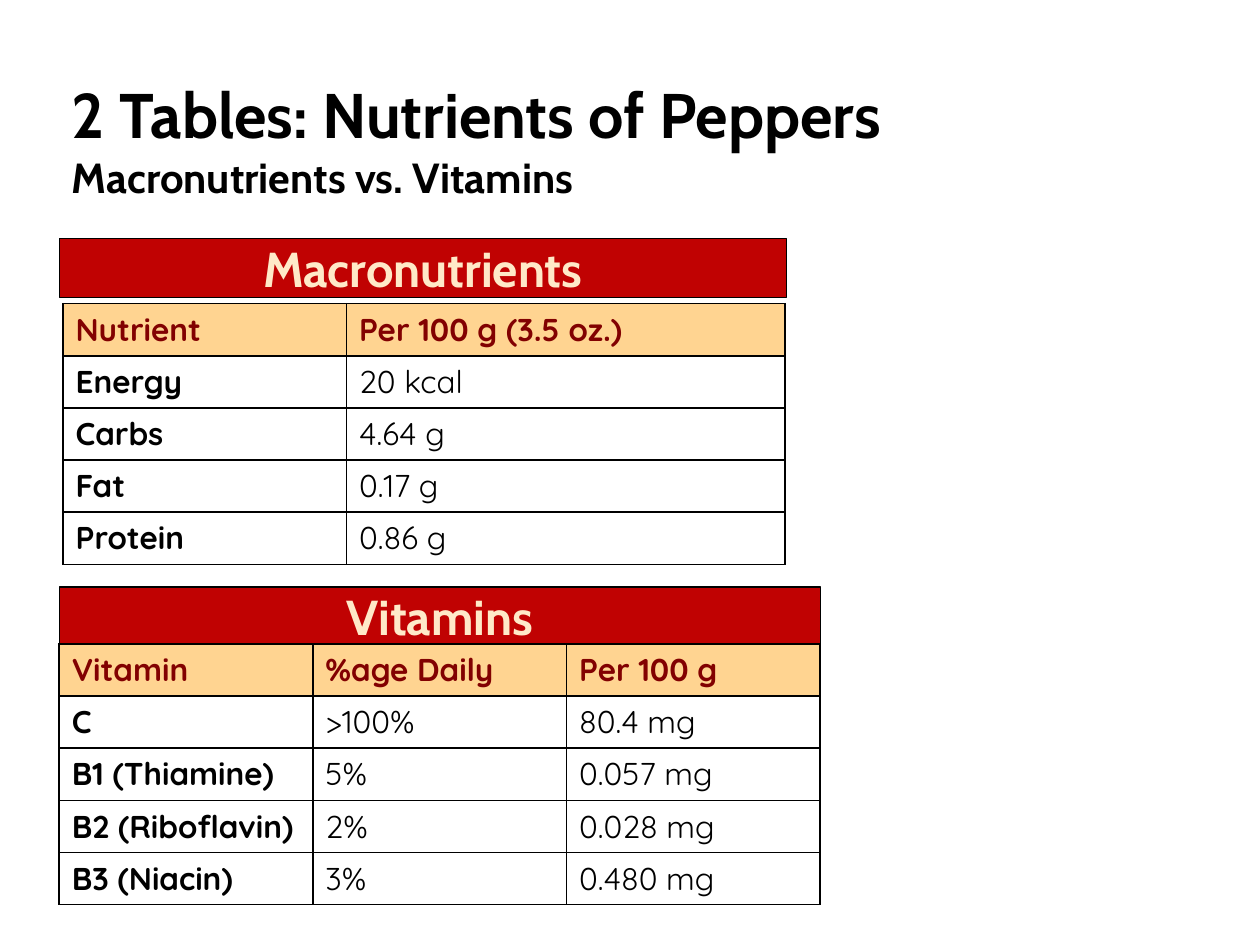
from lxml import etree
from pptx import Presentation
from pptx.dml.color import RGBColor
from pptx.enum.text import MSO_ANCHOR, MSO_AUTO_SIZE, PP_ALIGN
from pptx.oxml.ns import qn
from pptx.util import Inches, Pt

TOP, BOTTOM = MSO_ANCHOR.TOP, MSO_ANCHOR.BOTTOM
LEFT, CENTER = PP_ALIGN.LEFT, PP_ALIGN.CENTER
NO_AUTOFIT = MSO_AUTO_SIZE.NONE

BLACK = RGBColor(0x00, 0x00, 0x00)
WHITE = RGBColor(0xFF, 0xFF, 0xFF)
RED = RGBColor(0xC0, 0x02, 0x02)
DARK_RED = RGBColor(0x82, 0x01, 0x01)
CREAM = RGBColor(0xFF, 0xE9, 0xC8)
ORANGE = RGBColor(0xFF, 0xD4, 0x91)

HEADING_FONT = "Cabin"
TABLE_FONT = "Quicksand"
COMPARISON_LAYOUT = 4
ROW_HEIGHT = 0.413

MACRONUTRIENTS = [
    ("Nutrient", "Per 100 g (3.5 oz.)"),
    ("Energy", "20 kcal"),
    ("Carbs", "4.64 g"),
    ("Fat", "0.17 g"),
    ("Protein", "0.86 g"),
]
VITAMINS = [
    ("Vitamin", "%age Daily", "Per 100 g"),
    ("C", ">100%", "80.4 mg"),
    ("B1 (Thiamine)", "5%", "0.057 mg"),
    ("B2 (Riboflavin)", "2%", "0.028 mg"),
    ("B3 (Niacin)", "3%", "0.480 mg"),
]


def place(shape, left, top, width, height):
    shape.left, shape.top = Inches(left), Inches(top)
    shape.width, shape.height = Inches(width), Inches(height)


def set_font(font, name, size, color, bold):
    font.name, font.size, font.bold = name, Pt(size), bold
    font.color.rgb = color


def add_title(slide, box, title, subtitle):
    shape = slide.shapes.title
    place(shape, *box)
    frame = shape.text_frame
    frame.auto_size = NO_AUTOFIT
    frame.vertical_anchor = TOP
    paragraph = frame.paragraphs[0]
    paragraph.alignment = LEFT
    set_font(paragraph.font, HEADING_FONT, 36, BLACK, True)
    title_run = paragraph.add_run()
    title_run.text = title
    title_run.font.size = Pt(36)
    paragraph.add_line_break()
    subtitle_run = paragraph.add_run()
    subtitle_run.text = subtitle
    subtitle_run.font.size = Pt(24)


def add_banner(shape, box, text):
    """Turn a body placeholder into the coloured heading of a table."""
    place(shape, *box)
    shape.fill.solid()
    shape.fill.fore_color.rgb = RED
    shape.line.color.rgb = BLACK
    shape.line.width = Pt(0.75)
    frame = shape.text_frame
    frame.auto_size = NO_AUTOFIT
    frame.vertical_anchor = BOTTOM
    frame.margin_left = frame.margin_right = 0
    frame.margin_top = frame.margin_bottom = 0
    paragraph = frame.paragraphs[0]
    paragraph.text = text
    paragraph.alignment = CENTER
    paragraph.space_before = Pt(0)
    set_font(paragraph.font, HEADING_FONT, 28, CREAM, True)


def add_borders(cell):
    properties = cell._tc.get_or_add_tcPr()
    for position, side in enumerate(("lnL", "lnR", "lnT", "lnB")):
        line = etree.Element(qn(f"a:{side}"), w=str(Pt(1)))
        fill = etree.SubElement(line, qn("a:solidFill"))
        etree.SubElement(fill, qn("a:srgbClr"), val=str(BLACK))
        properties.insert(position, line)


def add_nutrient_table(slide, left, top, column_widths, rows):
    table = slide.shapes.add_table(
        len(rows), len(column_widths), Inches(left), Inches(top),
        Inches(sum(column_widths)), Inches(ROW_HEIGHT * len(rows))).table
    for column, width in zip(table.columns, column_widths):
        column.width = Inches(width)
    for row_index, row in enumerate(rows):
        is_header = row_index == 0
        for column_index, text in enumerate(row):
            cell = table.cell(row_index, column_index)
            cell.fill.solid()
            cell.fill.fore_color.rgb = ORANGE if is_header else WHITE
            add_borders(cell)
            paragraph = cell.text_frame.paragraphs[0]
            paragraph.text = text
            set_font(paragraph.font, TABLE_FONT, 18,
                     DARK_RED if is_header else BLACK,
                     is_header or column_index == 0)


def build_slide(presentation):
    slide = presentation.slides.add_slide(
        presentation.slide_layouts[COMPARISON_LAYOUT])
    placeholders = {shape.placeholder_format.idx: shape
                    for shape in slide.placeholders}
    add_title(slide, (0.47, 0.55, 8.25, 1.34),
              "2 Tables: Nutrients of Peppers", "Macronutrients vs. Vitamins")
    add_banner(placeholders[1], (0.47, 1.89, 5.77, 0.47), "Macronutrients")
    add_nutrient_table(slide, 0.5, 2.41, (2.25, 3.48), MACRONUTRIENTS)
    add_banner(placeholders[3], (0.47, 4.66, 6.04, 0.46), "Vitamins")
    add_nutrient_table(slide, 0.47, 5.11, [6.04 / 3] * 3, VITAMINS)
    for index in (2, 4):
        element = placeholders[index].element
        element.getparent().remove(element)


def main():
    presentation = Presentation()
    presentation.slide_width = Inches(10)
    presentation.slide_height = Inches(7.5)
    build_slide(presentation)
    presentation.save("out.pptx")


if __name__ == "__main__":
    main()
